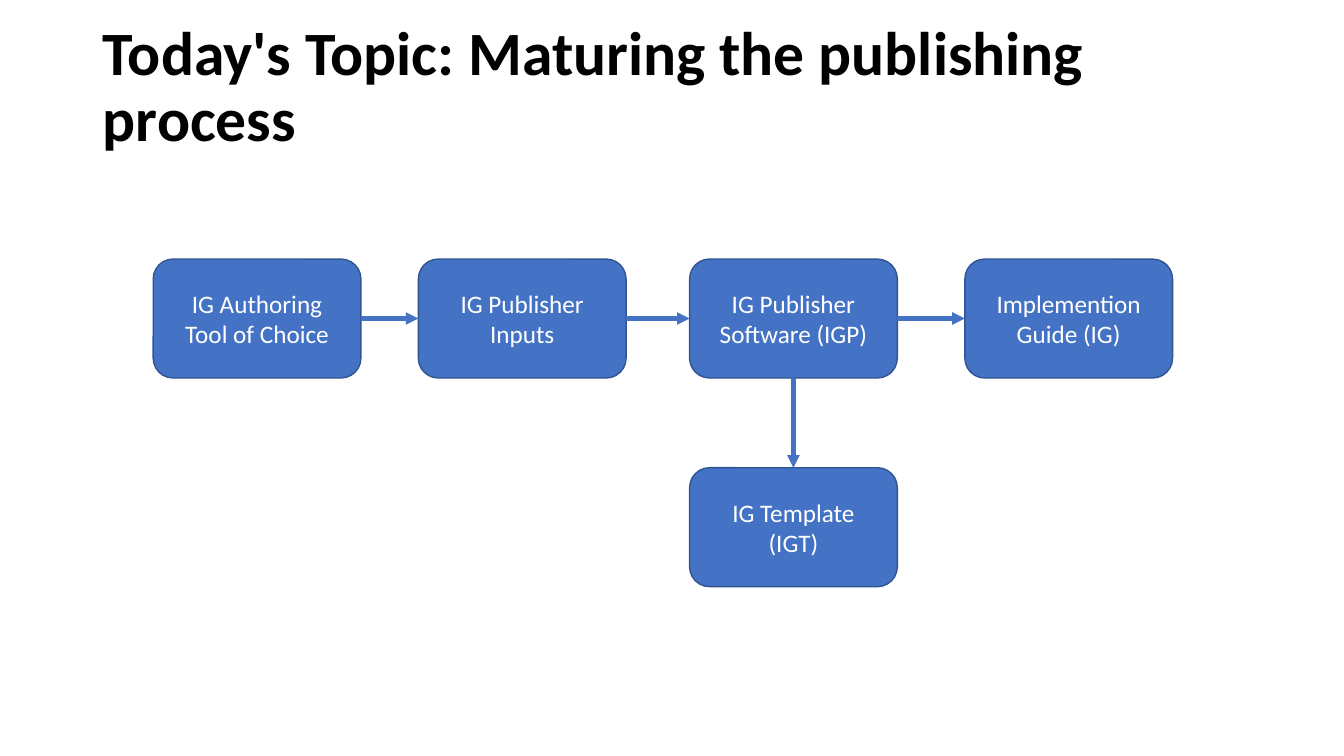
from lxml import etree
from pptx import Presentation
from pptx import util as u
from pptx.dml.color import RGBColor
from pptx.enum import shapes, text
from pptx.oxml.ns import qn

FONT = "Calibri"
BLUE = "4472C4"
BOX_WIDTH, BOX_HEIGHT = 2.06, 1.18
TOP, RIGHT, BOTTOM, LEFT = 0, 3, 2, 1  # connection sites of a rounded rectangle


def color(hex_string):
    return RGBColor.from_string(hex_string)


def style_font(paragraph, size, hex_string, bold=False):
    font = paragraph.font
    font.name, font.size, font.bold = FONT, u.Pt(size), bold
    font.color.rgb = color(hex_string)


def set_title(slide, wording, left, top, width, height):
    title = slide.shapes.title
    title.left, title.top = u.Inches(left), u.Inches(top)
    title.width, title.height = u.Inches(width), u.Inches(height)
    frame = title.text_frame
    frame.text = wording
    frame.word_wrap = True
    frame.auto_size = text.MSO_AUTO_SIZE.NONE
    frame.vertical_anchor = text.MSO_ANCHOR.MIDDLE
    paragraph = frame.paragraphs[0]
    paragraph.alignment = text.PP_ALIGN.LEFT
    paragraph.line_spacing = 0.9
    style_font(paragraph, 44, "000000", bold=True)


def add_step(slide, wording, left, top):
    step = slide.shapes.add_shape(
        shapes.MSO_SHAPE.ROUNDED_RECTANGLE,
        u.Inches(left), u.Inches(top), u.Inches(BOX_WIDTH), u.Inches(BOX_HEIGHT))
    step.shadow.inherit = False
    step.fill.solid()
    step.fill.fore_color.rgb = color(BLUE)
    step.line.color.rgb = color("325491")
    step.line.width = u.Pt(1)
    frame = step.text_frame
    frame.text = wording
    frame.word_wrap = True
    frame.vertical_anchor = text.MSO_ANCHOR.MIDDLE
    for paragraph in frame.paragraphs:
        paragraph.alignment = text.PP_ALIGN.CENTER
        style_font(paragraph, 18, "FFFFFF")
    return step


def add_arrow(slide, source, source_site, target, target_site):
    arrow = slide.shapes.add_connector(shapes.MSO_CONNECTOR.STRAIGHT, 0, 0, 0, 0)
    arrow.begin_connect(source, source_site)
    arrow.end_connect(target, target_site)
    arrow.line.color.rgb = color(BLUE)
    arrow.line.width = u.Pt(3)
    etree.SubElement(arrow.line._get_or_add_ln(), qn("a:tailEnd"), type="triangle")
    etree.SubElement(arrow._element.spPr, qn("a:effectLst"))


def add_publishing_flow(slide, left, top):
    """Draw the row of steps from left, top, with the template below the software."""
    row = [
        ("IG Authoring\nTool of Choice", 0),
        ("IG Publisher Inputs", 2.63),
        ("IG Publisher Software (IGP)", 5.32),
        ("Implemention Guide (IG)", 8.05),
    ]
    steps = [add_step(slide, wording, left + offset, top) for wording, offset in row]
    template = add_step(slide, "IG Template (IGT)", left + row[2][1], top + 2.07)
    for source, target in zip(steps, steps[1:]):
        add_arrow(slide, source, RIGHT, target, LEFT)
    add_arrow(slide, steps[2], BOTTOM, template, TOP)


def main():
    presentation = Presentation()
    presentation.slide_width = u.Inches(13.33)
    presentation.slide_height = u.Inches(7.5)
    slide = presentation.slides.add_slide(presentation.slide_layouts.get_by_name("Title Only"))
    set_title(slide, "Today's Topic: Maturing the publishing process", 0.92, 0.39, 11.5, 0.98)
    add_publishing_flow(slide, 1.52, 2.57)
    presentation.save("out.pptx")


if __name__ == "__main__":
    main()
